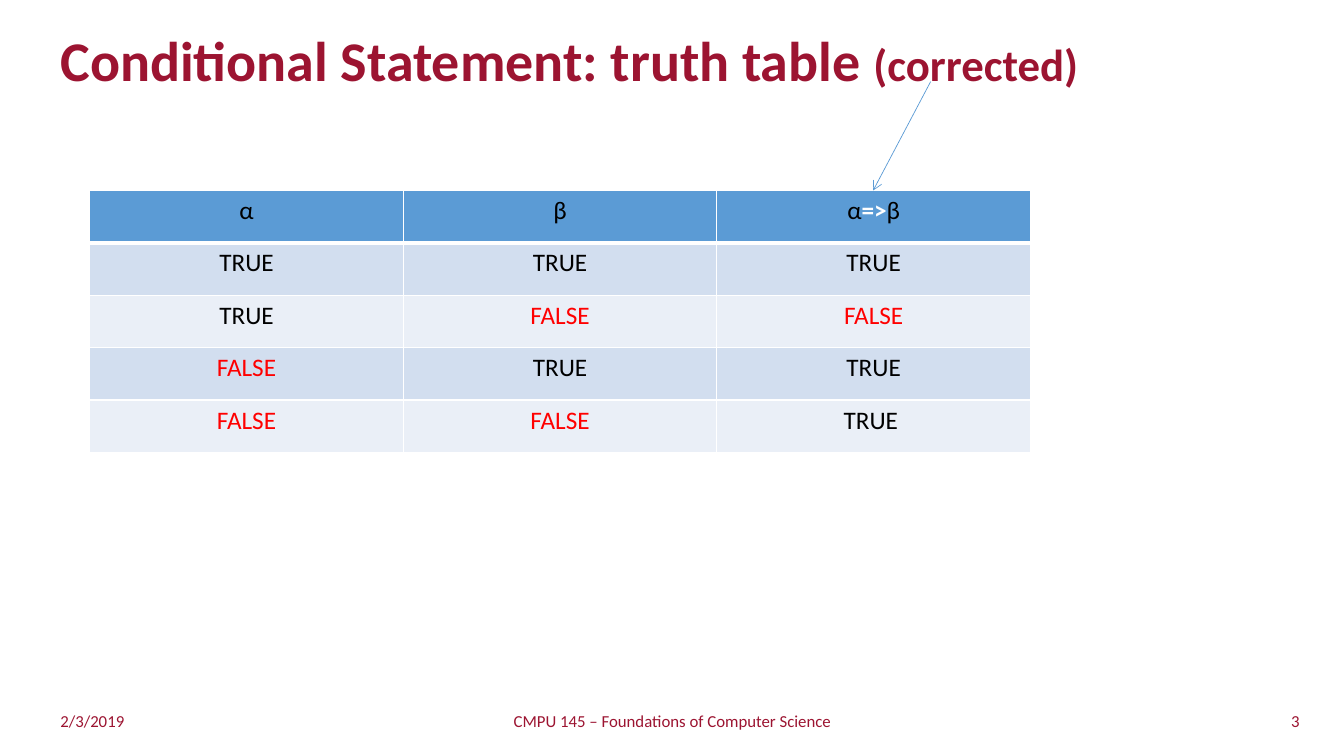
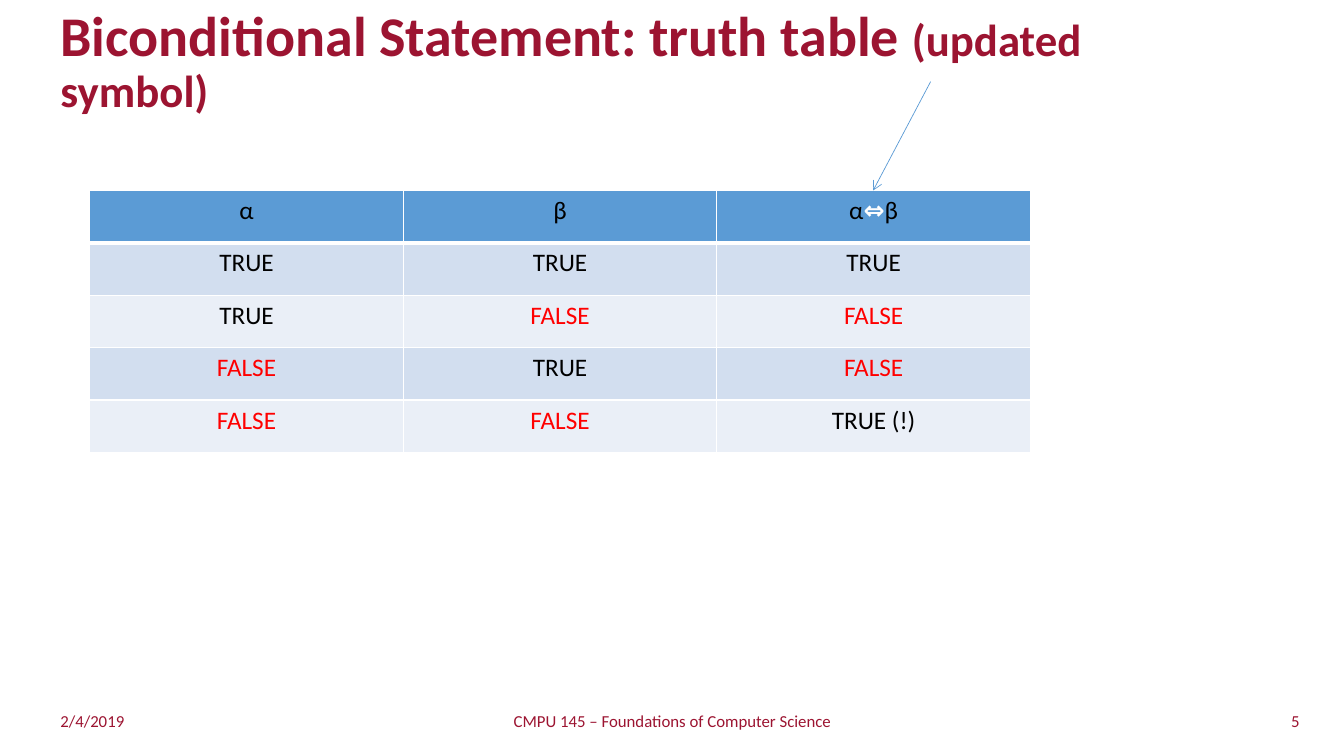
"""Build two truth-table slides: the conditional and the biconditional statement."""
import pptx
import pptx.dml.color
import pptx.enum.shapes
import pptx.enum.text
import pptx.oxml.ns
import pptx.util
from lxml import etree

Inches = pptx.util.Inches
Pt = pptx.util.Pt
qn = pptx.oxml.ns.qn
ALIGN = pptx.enum.text.PP_ALIGN
MIDDLE = pptx.enum.text.MSO_ANCHOR.MIDDLE

FONT = "Calibri"
COLORS = {
    "maroon": "9C1431",
    "blue": "5B9BD5",
    "band_dark": "D2DEEF",
    "band_light": "EAEFF7",
    "white": "FFFFFF",
    "black": "000000",
    "red": "FF0000",
}
COURSE = "CMPU 145 – Foundations of Computer Science"
SLIDES = [
    {
        "title": "Conditional Statement: truth table ",
        "remark": "(corrected)",
        "date": "2/3/2019",
        "number": "3",
        "symbol": "=>",
        "results": ["TRUE", "FALSE", "TRUE", "TRUE "],
    },
    {
        "title": "Biconditional Statement: truth table ",
        "remark": "(updated symbol)",
        "date": "2/4/2019",
        "number": "5",
        "symbol": "⇔",
        "results": ["TRUE", "FALSE", "FALSE", "TRUE (!)"],
    },
]
INPUTS = [("TRUE", "TRUE"), ("TRUE", "FALSE"), ("FALSE", "TRUE"), ("FALSE", "FALSE")]
TABLE_LEFT, TABLE_TOP = 0.89, 1.89
COLUMN_WIDTH, ROW_HEIGHT = 3.11, 0.52


def add_run(paragraph, text, size, color, bold=False):
    """Append one formatted run to the paragraph."""
    run = paragraph.add_run()
    run.text = text
    run.font.name = FONT
    run.font.size = Pt(size)
    run.font.bold = bold
    run.font.color.rgb = pptx.dml.color.RGBColor.from_string(COLORS[color])


def add_border(cell, side, width):
    """Draw a white border on one side (L, R, T or B) of the cell."""
    properties = cell._tc.get_or_add_tcPr()
    line = etree.SubElement(properties, qn(f"a:ln{side}"), w=str(Pt(width)))
    fill = etree.SubElement(line, qn("a:solidFill"))
    etree.SubElement(fill, qn("a:srgbClr"), val=COLORS["white"])


presentation = pptx.Presentation()
presentation.slide_width = Inches(13.33)
presentation.slide_height = Inches(7.5)
title_only = presentation.slide_layouts[5]

for content in SLIDES:
    slide = presentation.slides.add_slide(title_only)

    title = slide.shapes.title
    title.left, title.top = Inches(0.5), Inches(0.25)
    title.width, title.height = Inches(11.45), Inches(0.75)
    title.text_frame.auto_size = pptx.enum.text.MSO_AUTO_SIZE.NONE
    title.text_frame.vertical_anchor = MIDDLE
    paragraph = title.text_frame.paragraphs[0]
    paragraph.alignment = ALIGN.LEFT
    paragraph.line_spacing = 0.9
    add_run(paragraph, content["title"], 40, "maroon", True)
    add_run(paragraph, content["remark"], 32, "maroon", True)

    footers = [
        (content["date"], 0.5, 3.76, ALIGN.LEFT),
        (COURSE, 4.42, 4.5, ALIGN.CENTER),
        (content["number"], 9.23, 3.76, ALIGN.RIGHT),
    ]
    for text, left, width, alignment in footers:
        footer = slide.shapes.add_textbox(Inches(left), Inches(6.95), Inches(width), Inches(0.4))
        footer.text_frame.word_wrap = True
        footer.text_frame.vertical_anchor = MIDDLE
        paragraph = footer.text_frame.paragraphs[0]
        paragraph.alignment = alignment
        add_run(paragraph, text, 12, "maroon")

    rows = [("α", "β", content["symbol"])]
    rows += [(*inputs, result) for inputs, result in zip(INPUTS, content["results"])]
    table = slide.shapes.add_table(
        len(rows), 3, Inches(TABLE_LEFT), Inches(TABLE_TOP),
        Inches(3 * COLUMN_WIDTH), Inches(len(rows) * ROW_HEIGHT),
    ).table
    for column in table.columns:
        column.width = Inches(COLUMN_WIDTH)
    for row_index, values in enumerate(rows):
        table.rows[row_index].height = Inches(ROW_HEIGHT)
        if row_index == 0:
            background = "blue"
        else:
            background = "band_dark" if row_index % 2 else "band_light"
        for column_index, value in enumerate(values):
            cell = table.cell(row_index, column_index)
            add_border(cell, "L", 1)
            add_border(cell, "R", 1)
            add_border(cell, "T", 3 if row_index == 1 else 1)
            add_border(cell, "B", 3 if row_index == 0 else 1)
            cell.fill.solid()
            cell.fill.fore_color.rgb = pptx.dml.color.RGBColor.from_string(COLORS[background])
            paragraph = cell.text_frame.paragraphs[0]
            paragraph.alignment = ALIGN.CENTER
            if value == content["symbol"]:
                add_run(paragraph, "α", 18, "black")
                add_run(paragraph, value, 18, "white", True)
                add_run(paragraph, "β", 18, "black")
            else:
                add_run(paragraph, value, 18, "red" if value == "FALSE" else "black")

    arrow = slide.shapes.add_connector(
        pptx.enum.shapes.MSO_CONNECTOR.STRAIGHT,
        Inches(9.23), Inches(0.81), Inches(8.66), Inches(TABLE_TOP),
    )
    arrow.line.color.rgb = pptx.dml.color.RGBColor.from_string(COLORS["blue"])
    arrow.line.width = Pt(0.5)
    etree.SubElement(arrow.line._get_or_add_ln(), qn("a:tailEnd"), type="arrow")
    etree.SubElement(arrow._element.spPr, qn("a:effectLst"))

presentation.save("out.pptx")
